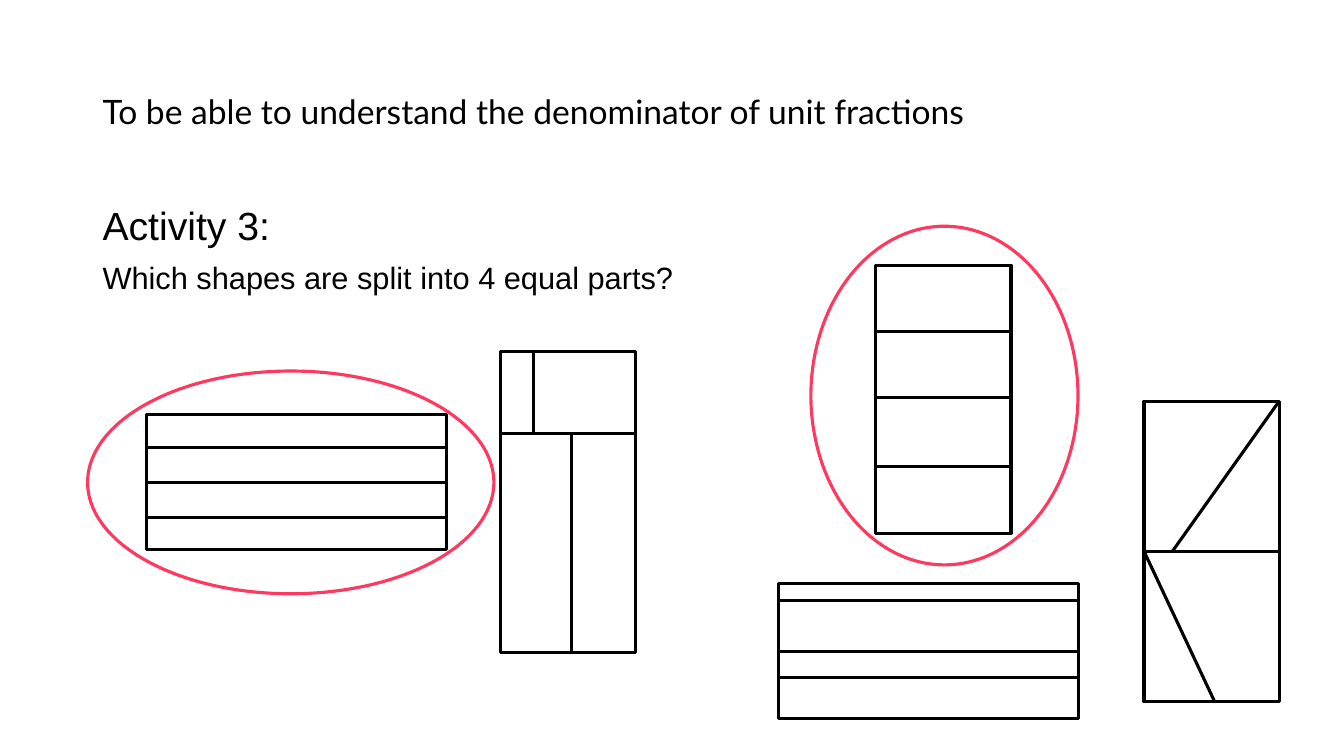
import pptx
import pptx.util
import pptx.dml.color
import pptx.enum.shapes
import pptx.enum.text
import pptx.oxml.ns
import lxml.etree

Pt = pptx.util.Pt
SHAPE = pptx.enum.shapes.MSO_SHAPE
BLACK, WHITE, PINK = "000000", "FFFFFF", "FF3860"
LONG, SHORT, TALL = 214.6, 96.5, 191.5


def rgb(value):
    return pptx.dml.color.RGBColor.from_string(value)


prs = pptx.Presentation()
prs.slide_width, prs.slide_height = Pt(960), Pt(540)
s = prs.slides.add_slide(prs.slide_layouts[6])

texts = [
    (28.8, 690, 104.4, pptx.enum.text.MSO_ANCHOR.MIDDLE, "Lato",
     [("To be able to understand the denominator of unit fractions", 24)]),
    (144, 828, 342.7, pptx.enum.text.MSO_ANCHOR.TOP, "Arial",
     [("Activity 3:", 28), ("Which shapes are split into 4 equal parts?", 22)]),
]
for top, width, height, anchor, font, lines in texts:
    tf = s.shapes.add_textbox(Pt(66.2), Pt(top), Pt(width), Pt(height)).text_frame
    tf.word_wrap = True
    tf.vertical_anchor = anchor
    for i, (text, size) in enumerate(lines):
        p = tf.add_paragraph() if i else tf.paragraphs[0]
        p.text = text
        p.line_spacing = 0.9
        if i:
            p.space_before = Pt(10)
        p.font.name, p.font.size = font, Pt(size)
        p.font.color.rgb = rgb(BLACK)

# Each rectangle: left, top, width, height, full-width cuts, other cuts (x1, y1, x2, y2)
rectangles = [
    (104.4, 295.9, LONG, SHORT, [23.8, 49, 73.5], []),
    (357.8, 251.3, SHORT, LONG, [58.3],
     [(50.4, LONG, 50.4, 58.3), (23, 58.3, 23, 0)]),
    (817.2, 286.6, SHORT, LONG, [LONG / 2],
     [(50.4, LONG, 0, LONG / 2), (20.2, LONG / 2, SHORT, 0)]),
    (625.7, 189.4, SHORT, TALL, [47.5, 94.3, 144], []),
    (555.8, 416.9, LONG, SHORT, [12.2, 48.2, 67], []),
]
ellipses = [(62.6, 265, 290.2, 159.1), (579.2, 161.6, 190.8, 241.9)]

for left, top, width, height, across, others in rectangles:
    sp = s.shapes.add_shape(SHAPE.RECTANGLE, Pt(left), Pt(top), Pt(width), Pt(height))
    sp.shadow.inherit = False
    sp.fill.solid()
    sp.fill.fore_color.rgb = rgb(WHITE)
    sp.line.color.rgb = rgb(BLACK)
    sp.line.width = Pt(2.25)
    for x1, y1, x2, y2 in [(0, y, width, y) for y in across] + others:
        cut = s.shapes.add_connector(
            pptx.enum.shapes.MSO_CONNECTOR.STRAIGHT,
            Pt(left + x1), Pt(top + y1), Pt(left + x2), Pt(top + y2))
        cut.line.color.rgb = rgb(BLACK)
        cut.line.width = Pt(2.25)
        lxml.etree.SubElement(cut._element.spPr, pptx.oxml.ns.qn("a:effectLst"))

for left, top, width, height in ellipses:
    sp = s.shapes.add_shape(SHAPE.OVAL, Pt(left), Pt(top), Pt(width), Pt(height))
    sp.shadow.inherit = False
    sp.fill.background()
    sp.line.color.rgb = rgb(PINK)
    sp.line.width = Pt(2.25)

prs.save("out.pptx")
